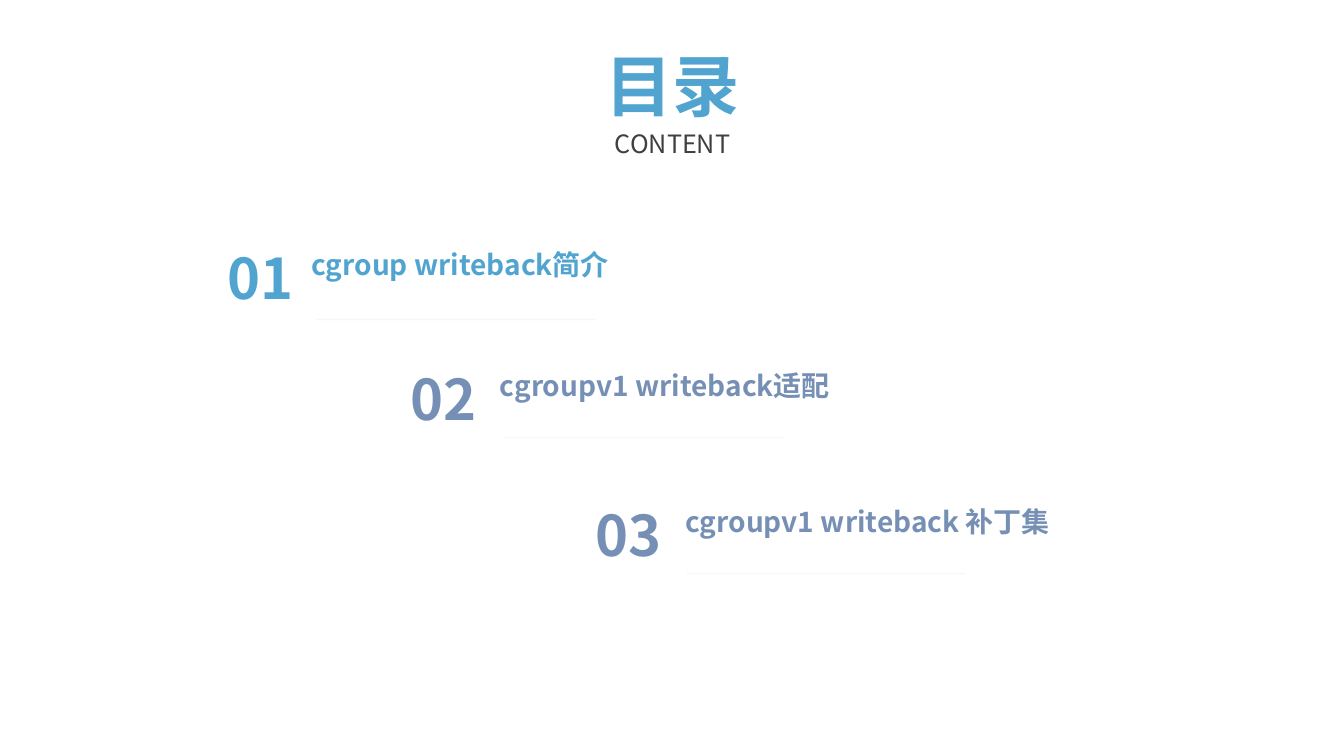
from dataclasses import dataclass

import pptx
import pptx.dml.color
import pptx.enum.shapes
import pptx.enum.text
import pptx.oxml
import pptx.oxml.ns
import pptx.shapes.autoshape
import pptx.slide
import pptx.util

Inches = pptx.util.Inches
FONT = "Noto Sans CJK SC"
BLUE = "51A4CF"
SLATE = "768FB5"
GRAY = "404040"
RULE_LENGTH = 2.77
RULE_OPACITY = 8000


@dataclass(frozen=True)
class Entry:
    number: str
    label: str
    color: str
    number_at: tuple[float, float]
    label_at: tuple[float, float]
    label_width: float
    rule_at: tuple[float, float]


ENTRIES = [
    Entry("01", "cgroup writeback简介", BLUE, (2.16, 2.37), (2.99, 2.41), 3.23, (3.14, 3.17)),
    Entry("02", "cgroupv1 writeback适配", SLATE, (3.97, 3.57), (4.86, 3.61), 3.56, (5, 4.34)),
    Entry("03", "cgroupv1 writeback 补丁集", SLATE, (5.81, 4.92), (6.7, 4.96), 3.97, (6.81, 5.69)),
]


def rgb(color: str) -> pptx.dml.color.RGBColor:
    return pptx.dml.color.RGBColor.from_string(color)


def add_text(page: pptx.slide.Slide, text: str, *, at: tuple[float, float],
             width: float, height: float, size: float, color: str,
             bold: bool = False, wrap: bool = False) -> pptx.shapes.autoshape.Shape:
    box = page.shapes.add_textbox(*map(Inches, (*at, width, height)))
    frame = box.text_frame
    frame.word_wrap = wrap
    if not wrap:
        frame.auto_size = pptx.enum.text.MSO_AUTO_SIZE.SHAPE_TO_FIT_TEXT
    span = frame.paragraphs[0].add_run()
    span.text = text
    span.font.size = pptx.util.Pt(size)
    span.font.bold = bold
    span.font.color.rgb = rgb(color)
    span.font.name = FONT
    east_asian = pptx.oxml.parse_xml(
        f'<a:ea {pptx.oxml.ns.nsdecls("a")} typeface="{FONT}"/>')
    span.font._element.append(east_asian)
    return box


def add_rule(page: pptx.slide.Slide, at: tuple[float, float]) -> None:
    left, top = at
    rule = page.shapes.add_connector(
        pptx.enum.shapes.MSO_CONNECTOR.STRAIGHT,
        Inches(left), Inches(top), Inches(left + RULE_LENGTH), Inches(top))
    rule.line.color.rgb = rgb(SLATE)
    rule.line.width = pptx.util.Pt(0.75)
    namespace = pptx.oxml.ns.nsdecls("a")
    properties = rule._element.spPr
    properties.find(".//" + pptx.oxml.ns.qn("a:srgbClr")).append(
        pptx.oxml.parse_xml(f'<a:alpha {namespace} val="{RULE_OPACITY}"/>'))
    properties.append(pptx.oxml.parse_xml(f'<a:effectLst {namespace}/>'))


def add_entry(page: pptx.slide.Slide, entry: Entry) -> None:
    add_text(page, entry.number, at=entry.number_at, width=0.89, height=0.77,
             size=40, color=entry.color, bold=True)
    add_text(page, entry.label, at=entry.label_at, width=entry.label_width,
             height=0.44, size=20, color=entry.color, bold=True)
    add_rule(page, entry.rule_at)


def main() -> None:
    deck = pptx.Presentation()
    deck.slide_width = Inches(13.33)
    deck.slide_height = Inches(7.5)
    page = deck.slides.add_slide(deck.slide_layouts[6])

    title = add_text(page, "目录", at=(5.91, 0.45), width=1.68, height=0.89,
                     size=48, color=BLUE, bold=True, wrap=True)
    title.text_frame.vertical_anchor = pptx.enum.text.MSO_ANCHOR.MIDDLE
    title.text_frame.paragraphs[0].line_spacing = 0.9
    add_text(page, "CONTENT", at=(6, 1.22), width=1.41, height=0.4,
             size=18, color=GRAY)

    for entry in ENTRIES:
        add_entry(page, entry)
    deck.save("out.pptx")


if __name__ == "__main__":
    main()
